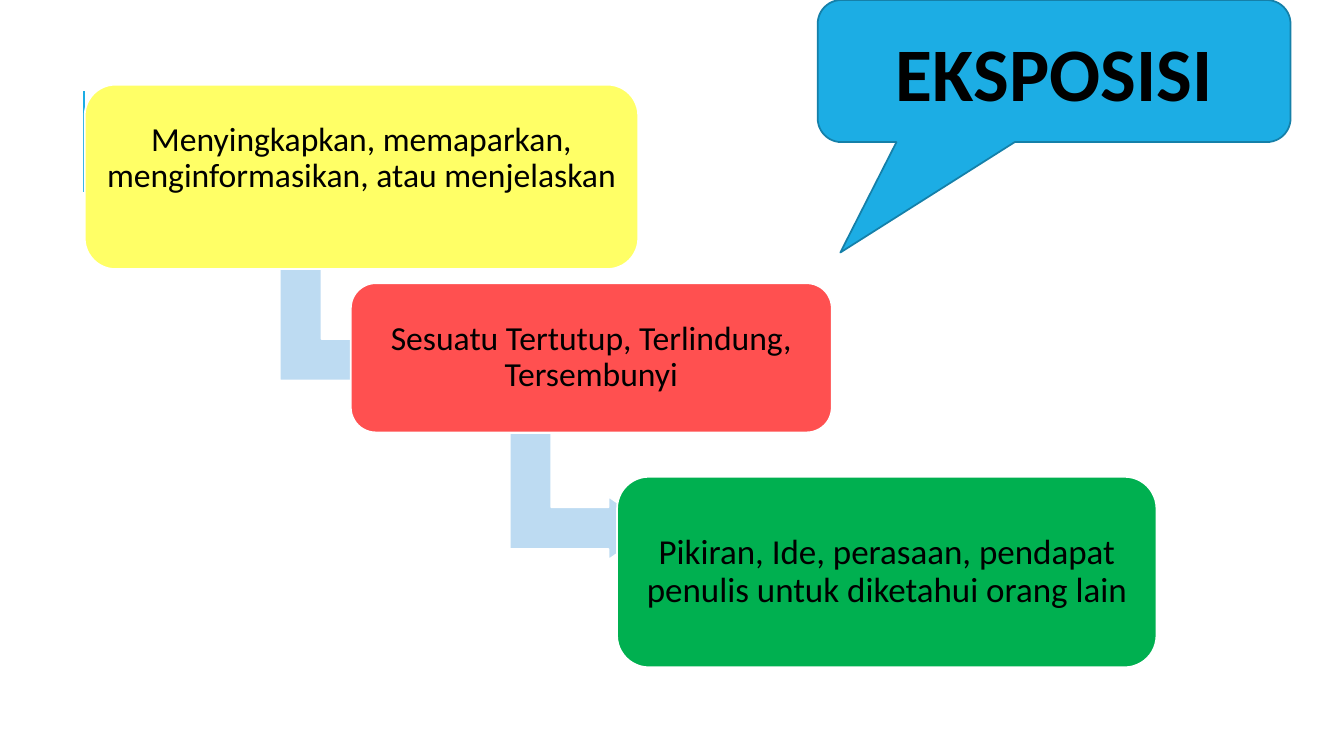
from dataclasses import dataclass

from lxml import etree
from pptx import Presentation
from pptx.dml.color import RGBColor
from pptx.enum.shapes import MSO_CONNECTOR, MSO_SHAPE
from pptx.enum.text import MSO_ANCHOR, PP_ALIGN
from pptx.oxml.ns import qn
from pptx.util import Inches, Pt

ROUND_RECT = MSO_SHAPE.ROUNDED_RECTANGLE
CALLOUT = MSO_SHAPE.ROUNDED_RECTANGULAR_CALLOUT
BENT_ARROW = MSO_SHAPE.BENT_UP_ARROW
STRAIGHT = MSO_CONNECTOR.STRAIGHT
MIDDLE = MSO_ANCHOR.MIDDLE
CENTER = PP_ALIGN.CENTER

BLUE, DARK_BLUE, PALE_BLUE = "1CADE4", "1580A9", "BDDBF2"
WHITE, BLACK = "FFFFFF", "000000"
ARROW_SIZE = (1.26, 1.43)
INSET = 0.1


@dataclass
class Step:
    text: str
    box: tuple[float, float, float, float]
    fill: str
    size: int = 24
    bottom_inset: float = INSET
    arrow_at: tuple[float, float] | None = None


STEPS = [
    Step("Menyingkapkan, memaparkan, menginformasikan, atau menjelaskan",
         (0.84, 0.84, 5.49, 1.83), "FFFF66", bottom_inset=0.46, arrow_at=(2.86, 2.54)),
    Step("Sesuatu Tertutup, Terlindung, Tersembunyi",
         (3.48, 2.81, 4.77, 1.48), "FF5050", arrow_at=(5.14, 4.21)),
    Step("Pikiran, Ide, perasaan, pendapat penulis untuk diketahui orang lain",
         (6.12, 4.73, 5.35, 1.89), "00B050", size=25),
]


def rgb(color: str) -> RGBColor:
    return RGBColor.from_string(color)


def add_shape(s, kind, box: tuple, fill: str, line: str, adjustments: tuple):
    sp = s.shapes.add_shape(kind, *map(Inches, box))
    sp.shadow.inherit = False
    sp.fill.solid()
    sp.fill.fore_color.rgb = rgb(fill)
    sp.line.color.rgb = rgb(line)
    sp.line.width = Pt(1.25)
    for i, value in enumerate(adjustments):
        sp.adjustments[i] = value
    return sp


def set_text(sp, text: str, size: int, bold: bool = False):
    tf = sp.text_frame
    tf.word_wrap = True
    tf.vertical_anchor = MIDDLE
    p = tf.paragraphs[0]
    p.text = text
    p.alignment = CENTER
    p.font.name = "Calibri"
    p.font.size = Pt(size)
    p.font.bold = bold
    p.font.color.rgb = rgb(BLACK)
    return tf


def add_accent_line(s) -> None:
    line = s.shapes.add_connector(
        STRAIGHT, Inches(0.83), Inches(1.9), Inches(0.83), Inches(0.9))
    line.line.color.rgb = rgb(BLUE)
    line.line.width = Pt(1.5)
    etree.SubElement(line._element.spPr, qn("a:effectLst"))


def add_step(s, step: Step) -> None:
    """Draw the arrow to the next step, then the box that overlaps it."""
    if step.arrow_at:
        arrow = add_shape(s, BENT_ARROW, step.arrow_at + ARROW_SIZE,
                          PALE_BLUE, WHITE, (0.328, 0.25, 0.358))
        arrow.rotation = 90
    sp = add_shape(s, ROUND_RECT, step.box, step.fill, WHITE, (0.167,))
    tf = set_text(sp, step.text, step.size)
    tf.margin_left = tf.margin_right = tf.margin_top = Inches(INSET)
    tf.margin_bottom = Inches(step.bottom_inset)
    tf.paragraphs[0].line_spacing = 0.9


def main() -> None:
    prs = Presentation()
    prs.slide_width, prs.slide_height = Inches(13.33), Inches(7.5)
    s = prs.slides.add_slide(prs.slide_layouts[6])
    add_accent_line(s)
    title = add_shape(s, CALLOUT, (8.11, 0, 4.69, 1.41), BLUE, DARK_BLUE,
                      (-0.452, 1.277, 0.167))
    set_text(title, "EKSPOSISI", 54, bold=True)
    for step in STEPS:
        add_step(s, step)
    prs.save("out.pptx")


if __name__ == "__main__":
    main()
